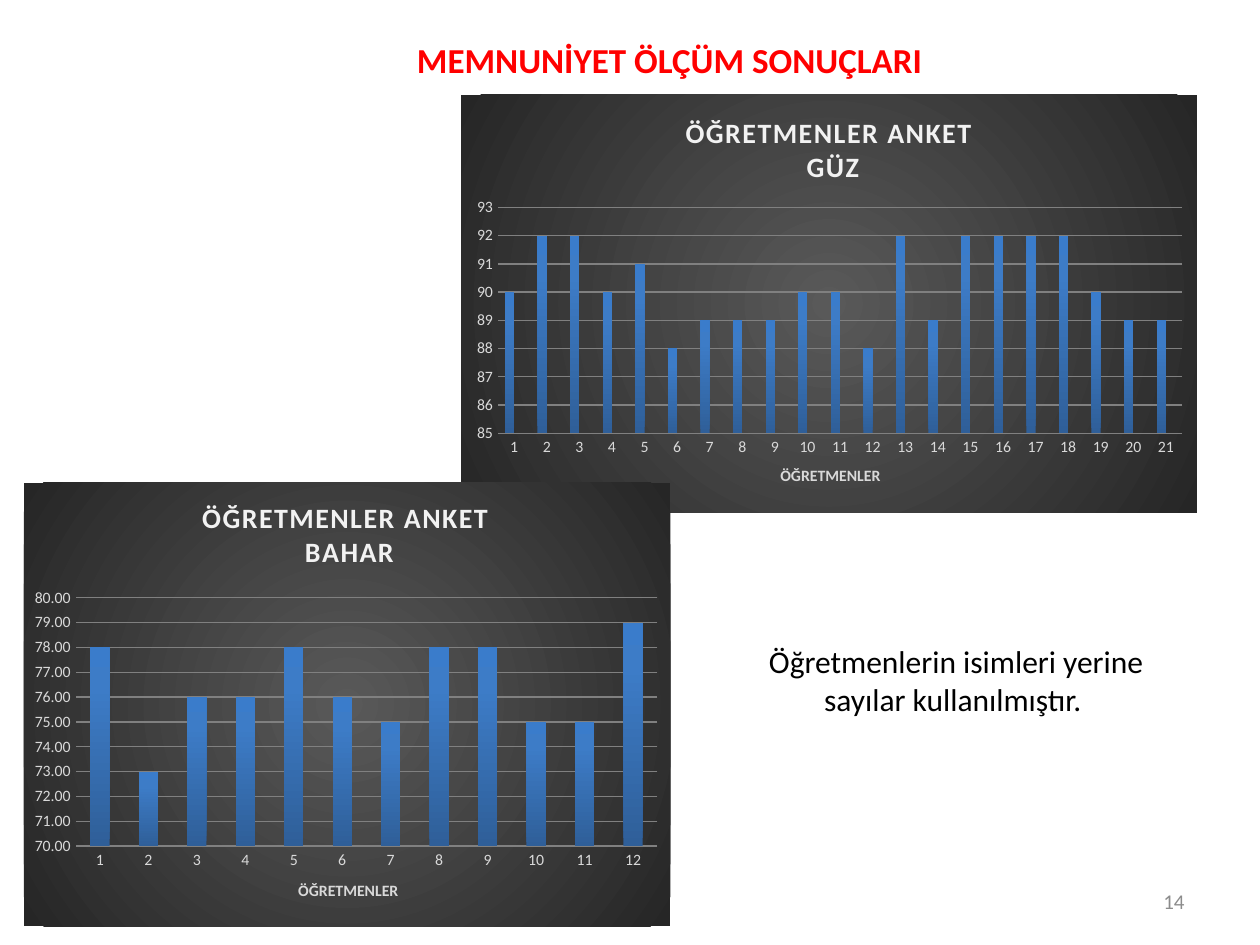
from dataclasses import dataclass

from lxml import etree
from pptx import Presentation
from pptx.chart.data import CategoryChartData
from pptx.dml.color import RGBColor
from pptx.enum.chart import XL_CHART_TYPE, XL_TICK_MARK
from pptx.enum.text import MSO_ANCHOR, PP_ALIGN
from pptx.oxml import parse_xml
from pptx.oxml.ns import qn
from pptx.util import Inches, Pt

CLUSTERED = XL_CHART_TYPE.COLUMN_CLUSTERED
NO_TICK = XL_TICK_MARK.NONE
CENTER, RIGHT = PP_ALIGN.CENTER, PP_ALIGN.RIGHT
TOP, MIDDLE = MSO_ANCHOR.TOP, MSO_ANCHOR.MIDDLE
FONT = "Calibri"
NAMESPACE = "http://schemas.openxmlformats.org/drawingml/2006/main"
UPWARD = '<a:lin ang="16200000" scaled="0"/>'
RADIAL = ('<a:path path="circle"><a:fillToRect l="50000" t="50000" '
          'r="50000" b="50000"/></a:path>')
BAR_STOPS = [
    [(0, "2F5F99"), (80, "3D7CC7"), (100, "3A7CCB")],
    [(0, "9C2F2D"), (80, "CB3E3A"), (100, "CE3B37")],
]
BACKGROUND_STOPS = [(0, "595959"), (100, "262626")]


@dataclass
class SurveyChart:
    term: str
    box: tuple
    series: list
    limits: tuple
    number_format: str
    plot: tuple
    title_corner: tuple
    axis_title_corner: tuple


AUTUMN = [90, 92, 92, 90, 91, 88, 89, 89, 89, 90, 90,
          88, 92, 89, 92, 92, 92, 92, 90, 89, 89]
SPRING = [78, 73, 76, 76, 78, 76, 75, 78, 78, 75, 75, 79]
CHARTS = [
    SurveyChart("GÜZ", (3.66, 0.75, 5.84, 3.32), [AUTUMN, [None] * len(AUTUMN)],
                (85, 93), "General", (0.05, 0.27, 0.93, 0.54),
                (0.3, 0.04), (0.43, 0.88)),
    SurveyChart("BAHAR", (0.19, 3.83, 5.13, 3.52), [SPRING],
                (70, 80), "#,##0.00", (0.08, 0.26, 0.9, 0.56),
                (0.27, 0.03), (0.42, 0.89)),
]


def color(value: str) -> RGBColor:
    return RGBColor.from_string(value)


def format_font(font, size: float, hex_color: str, bold: bool = False) -> None:
    font.name = FONT
    font.size = Pt(size)
    font.bold = bold
    font.color.rgb = color(hex_color)


def write_text(frame, text: str, *, size: float, hex_color: str = "000000",
               bold: bool = False, align=CENTER, spacing: int = 0) -> None:
    for index, line in enumerate(text.split("\n")):
        paragraph = frame.add_paragraph() if index else frame.paragraphs[0]
        paragraph.alignment = align
        run = paragraph.add_run()
        run.text = line
        format_font(run.font, size, hex_color, bold)
        if spacing:
            run.font._element.set("spc", str(spacing))


def place(shape, box: tuple) -> None:
    shape.left, shape.top, shape.width, shape.height = map(Inches, box)


def add_text(slide, text: str, box: tuple, anchor, **text_format) -> None:
    shape = slide.shapes.add_textbox(*map(Inches, box))
    shape.text_frame.word_wrap = True
    shape.text_frame.vertical_anchor = anchor
    write_text(shape.text_frame, text, **text_format)


def gradient(stops: list, direction: str):
    stop_xml = "".join(
        f'<a:gs pos="{position * 1000}"><a:srgbClr val="{value}"/></a:gs>'
        for position, value in stops)
    return parse_xml(f'<a:gradFill xmlns:a="{NAMESPACE}" rotWithShape="1">'
                     f'<a:gsLst>{stop_xml}</a:gsLst>{direction}</a:gradFill>')


def set_layout(element, position: int, fractions: tuple, inner: bool = False) -> None:
    for existing in element.findall(qn("c:layout")):
        element.remove(existing)
    layout = etree.Element(qn("c:layout"))
    element.insert(position, layout)
    manual = etree.SubElement(layout, qn("c:manualLayout"))
    settings = [("layoutTarget", "inner")] if inner else []
    settings += [("xMode", "edge"), ("yMode", "edge")]
    settings += zip("xywh", map(str, fractions))
    for name, value in settings:
        etree.SubElement(manual, qn(f"c:{name}")).set("val", value)


def format_axis(axis) -> None:
    axis.major_tick_mark = NO_TICK
    axis.minor_tick_mark = NO_TICK
    axis.format.line.fill.background()
    format_font(axis.tick_labels.font, 9, "D9D9D9")


def add_survey_chart(slide, survey: SurveyChart) -> None:
    data = CategoryChartData()
    data.categories = [str(number + 1) for number in range(len(survey.series[0]))]
    for index, values in enumerate(survey.series, 1):
        data.add_series(f"Series {index}", values)
    chart = slide.shapes.add_chart(CLUSTERED, *map(Inches, survey.box), data).chart
    format_font(chart.font, 10, "000000")
    chart.has_legend = False

    chart.has_title = True
    write_text(chart.chart_title.text_frame, f"ÖĞRETMENLER ANKET \n{survey.term}",
               size=16, hex_color="F2F2F2", bold=True, spacing=100)
    set_layout(chart.chart_title._element, 1, survey.title_corner)

    category_axis, value_axis = chart.category_axis, chart.value_axis
    format_axis(category_axis)
    format_axis(value_axis)
    write_text(category_axis.axis_title.text_frame, "ÖĞRETMENLER",
               size=9, hex_color="D9D9D9", bold=True)
    set_layout(category_axis.axis_title._element, 1, survey.axis_title_corner)
    value_axis.minimum_scale, value_axis.maximum_scale = survey.limits
    value_axis.major_unit = 1
    value_axis.tick_labels.number_format = survey.number_format
    value_axis.tick_labels.number_format_is_linked = False
    grid_line = value_axis.major_gridlines.format.line
    grid_line.color.rgb = color("808080")
    grid_line.width = Pt(0.75)

    plot = chart.plots[0]
    plot.gap_width = 150
    plot.overlap = 0
    plot.vary_by_categories = False
    for series, stops in zip(plot.series, BAR_STOPS):
        series._element.get_or_add_spPr().insert(0, gradient(stops, UPWARD))

    chart_element = chart._chartSpace.find(qn("c:chart"))
    set_layout(chart_element.find(qn("c:plotArea")), 0, survey.plot, inner=True)
    background = etree.Element(qn("c:spPr"))
    background.append(gradient(BACKGROUND_STOPS, RADIAL))
    border = etree.SubElement(background, qn("a:ln"))
    etree.SubElement(border, qn("a:noFill"))
    chart_element.addnext(background)


def main() -> None:
    presentation = Presentation()
    presentation.slide_width = Inches(10)
    presentation.slide_height = Inches(7.5)
    slide = presentation.slides.add_slide(presentation.slide_layouts[5])

    title = slide.shapes.title
    place(title, (5.68, 4.77, 3.82, 1.25))
    title.text_frame.word_wrap = True
    title.text_frame.vertical_anchor = MIDDLE
    write_text(title.text_frame,
               "Öğretmenlerin isimleri yerine sayılar kullanılmıştır. ", size=18)
    add_text(slide, "14", (7.17, 6.95, 2.33, 0.4), MIDDLE,
             size=12, hex_color="8C8C8C", align=RIGHT)
    add_text(slide, "MEMNUNİYET ÖLÇÜM SONUÇLARI", (1.77, 0.26, 7.09, 0.44), TOP,
             size=20, hex_color="FF0000", bold=True)
    for survey in CHARTS:
        add_survey_chart(slide, survey)
    presentation.save("out.pptx")


if __name__ == "__main__":
    main()
